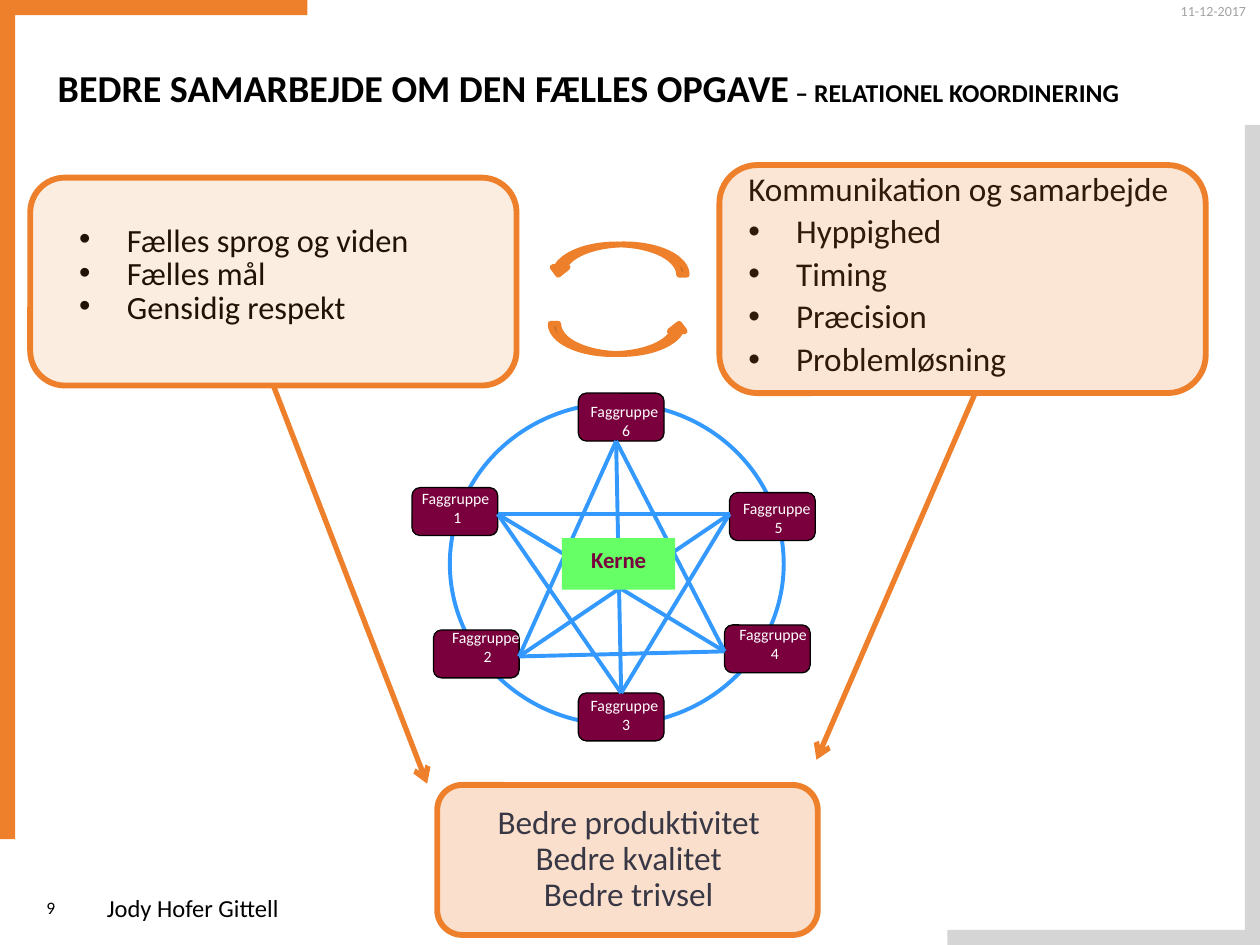
from dataclasses import dataclass

from lxml import etree
from pptx import Presentation
from pptx.dml.color import RGBColor
from pptx.enum.shapes import MSO_CONNECTOR, MSO_SHAPE
from pptx.enum.text import MSO_ANCHOR, PP_ALIGN
from pptx.oxml.ns import qn
from pptx.util import Inches, Pt

RECT = MSO_SHAPE.RECTANGLE
ROUND = MSO_SHAPE.ROUNDED_RECTANGLE
OVAL = MSO_SHAPE.OVAL
CURVE = MSO_SHAPE.CURVED_UP_ARROW
LINE = MSO_CONNECTOR.STRAIGHT
LEFT, MID, RIGHT = PP_ALIGN.LEFT, PP_ALIGN.CENTER, PP_ALIGN.RIGHT
TOP, BOTTOM = 0, 2


@dataclass(frozen=True)
class Theme:
    font: str = "Calibri"
    orange: str = "EE802C"
    gray: str = "D5D5D5"
    blue: str = "3399FF"
    wine: str = "7A003D"
    green: str = "66FF66"
    navy: str = "00214D"
    black: str = "000000"
    white: str = "FFFFFF"
    pale: str = "A2A2A2"
    title: float = 21.7
    sub: float = 14.7
    large: float = 19
    body: float = 18.5
    note: float = 14
    core: float = 13
    page: float = 10
    label: float = 9
    date: float = 8


class Board:
    def __init__(self, slide, theme):
        self.slide = slide
        self.theme = theme

    def shape(self, kind, at, fill=None, alpha=None, line=None, width=0.75):
        item = self.slide.shapes.add_shape(kind, *map(Inches, at))
        item.shadow.inherit = False
        if fill:
            item.fill.solid()
            item.fill.fore_color.rgb = RGBColor.from_string(fill)
            if alpha:
                tint = item.fill._xPr.find(qn("a:solidFill"))[0]
                etree.SubElement(tint, qn("a:alpha"), val=str(alpha * 1000))
        else:
            item.fill.background()
        if line:
            item.line.color.rgb = RGBColor.from_string(line)
            item.line.width = Pt(width)
        else:
            item.line.fill.background()
        return item

    def panel(self, at, alpha):
        tone = self.theme.orange
        return self.shape(ROUND, at, tone, alpha, tone, 3.35)

    def line(self, start, end, color, width, head=False):
        item = self.slide.shapes.add_connector(LINE, *map(Inches, start + end))
        item.line.color.rgb = RGBColor.from_string(color)
        item.line.width = Pt(width)
        if head:
            etree.SubElement(item.line._get_or_add_ln(), qn("a:tailEnd"), type="arrow")
        etree.SubElement(item._element.spPr, qn("a:effectLst"))
        return item

    def style(self, para, size, color, align=LEFT, bold=False):
        para.alignment = align
        font = para.font
        font.name = self.theme.font
        font.size = Pt(size)
        font.bold = bold
        font.color.rgb = RGBColor.from_string(color)

    def text(self, at, lines, size, color="000000", align=LEFT,
             space=None, gap=0, dots=()):
        box = self.slide.shapes.add_textbox(*map(Inches, at))
        frame = box.text_frame
        frame.word_wrap = True
        for i, words in enumerate(lines):
            para = frame.add_paragraph() if i else frame.paragraphs[0]
            para.text = words
            if space:
                para.line_spacing = space
            if i and gap:
                para.space_before = Pt(gap)
            if i in dots:
                props = para._p.get_or_add_pPr()
                props.set("marL", str(Inches(0.38)))
                props.set("indent", str(-Inches(0.38)))
                etree.SubElement(props, qn("a:buFont"), typeface="Arial")
                etree.SubElement(props, qn("a:buChar"), char="•")
            self.style(para, size, color, align)
        return box

    def title(self, at, parts):
        box = self.text(at, [""], self.theme.title)
        box.text_frame.vertical_anchor = MSO_ANCHOR.MIDDLE
        para = box.text_frame.paragraphs[0]
        para.font.bold = True
        for words, size in parts:
            run = para.add_run()
            run.text = words
            run.font.size = Pt(size)


def frame(board):
    t = board.theme
    for at, tone in [
        ((9.88, 0.99, 0.12, 6.51), t.gray),
        ((0, 0, 0.12, 6.66), t.orange),
        ((0.08, 0, 2.36, 0.12), t.orange),
        ((7.52, 7.38, 2.36, 0.12), t.gray),
    ]:
        board.shape(RECT, at, tone)
    board.title((0.36, 0.46, 9.29, 0.47), [
        ("BEDRE SAMARBEJDE OM DEN FÆLLES OPGAVE", t.title),
        (" – RELATIONEL KOORDINERING", t.sub),
    ])
    page = board.text((0.27, 7.04, 1.08, 0.33), ["9"], t.page)
    page.text_frame.vertical_anchor = MSO_ANCHOR.MIDDLE
    date = board.text((9.02, 0, 0.97, 0.21), ["11-12-2017"], t.date, t.pale, RIGHT)
    date.text_frame.margin_top = Inches(0.02)
    board.text((0.75, 7.04, 2.34, 0.34), ["Jody Hofer Gittell"], t.note)


def network(board):
    t = board.theme
    board.shape(OVAL, (3.57, 3.2, 2.65, 2.55), line=t.blue, width=2.25)
    groups = {
        6: ((4.59, 3.12), (4.42, 3.14), (4.89, 3.5)),
        5: ((5.79, 3.91), (5.63, 3.91), (5.79, 4.08)),
        4: ((5.75, 4.96), (5.6, 4.91), (5.75, 5.17)),
        3: ((4.59, 5.5), (4.42, 5.47), (4.93, 5.5)),
        2: ((3.44, 5), (3.32, 4.93), (4.12, 5.21)),
        1: ((3.27, 3.87), (3.08, 3.83), (3.95, 4.08)),
    }
    nodes = {
        num: board.shape(ROUND, spot + (0.68, 0.38), t.wine, line=t.black)
        for num, (spot, _, _) in groups.items()
    }
    for a, b in [(6, 3), (6, 2), (6, 4), (1, 5), (1, 4), (1, 3),
                 (2, 5), (5, 3), (4, 2)]:
        link = board.line(groups[a][2], groups[b][2], t.blue, 2.25)
        if b == 3:
            link.end_connect(nodes[b], TOP)

    core = board.shape(RECT, (4.46, 4.27, 0.9, 0.41), t.green)
    body = core.text_frame
    body.vertical_anchor = MSO_ANCHOR.TOP
    body.margin_top = body.margin_bottom = Inches(0.06)
    body.text = "Kerne"
    board.style(body.paragraphs[0], t.core, t.wine, MID, True)

    for num, (_, spot, _) in groups.items():
        board.text(spot + (1.1, 0.4), [f"Faggruppe \v{num}"], t.label, t.white, MID)


def panels(board):
    t = board.theme
    board.text((0.53, 1.78, 3.06, 0.98),
               ["Fælles sprog og viden", "Fælles mål", "Gensidig respekt"],
               t.body, space=0.7, gap=3.7, dots=range(3))
    board.text((3.56, 6.35, 2.86, 1.07),
               ["Bedre produktivitet", "Bedre kvalitet", "Bedre trivsel"],
               t.large, t.navy, MID, 0.9)
    board.text((5.84, 1.32, 3.81, 1.8),
               ["Kommunikation og samarbejde", "Hyppighed", "Timing",
                "Præcision", "Problemløsning"],
               t.large, space=0.9, gap=3.8, dots=range(1, 5))
    goals = board.panel((0.24, 1.41, 3.86, 1.65), 14)
    board.panel((5.71, 1.31, 3.86, 1.81), 20)
    board.panel((3.47, 6.23, 3.02, 1.19), 24)
    for top, turn in [(2.57, 0), (1.94, 180)]:
        arc = board.shape(CURVE, (4.37, top, 1.08, 0.24), t.orange,
                          line=t.orange, width=3.35)
        arc.rotation = turn
    board.line((7.74, 3.12), (6.48, 6.03), t.orange, 3, True)
    arrow = board.line((2.17, 3.06), (3.39, 6.22), t.orange, 3, True)
    arrow.begin_connect(goals, BOTTOM)


def main():
    deck = Presentation()
    deck.slide_width, deck.slide_height = Inches(10), Inches(7.5)
    board = Board(deck.slides.add_slide(deck.slide_layouts[6]), Theme())
    frame(board)
    network(board)
    panels(board)
    deck.save("out.pptx")


if __name__ == "__main__":
    main()
